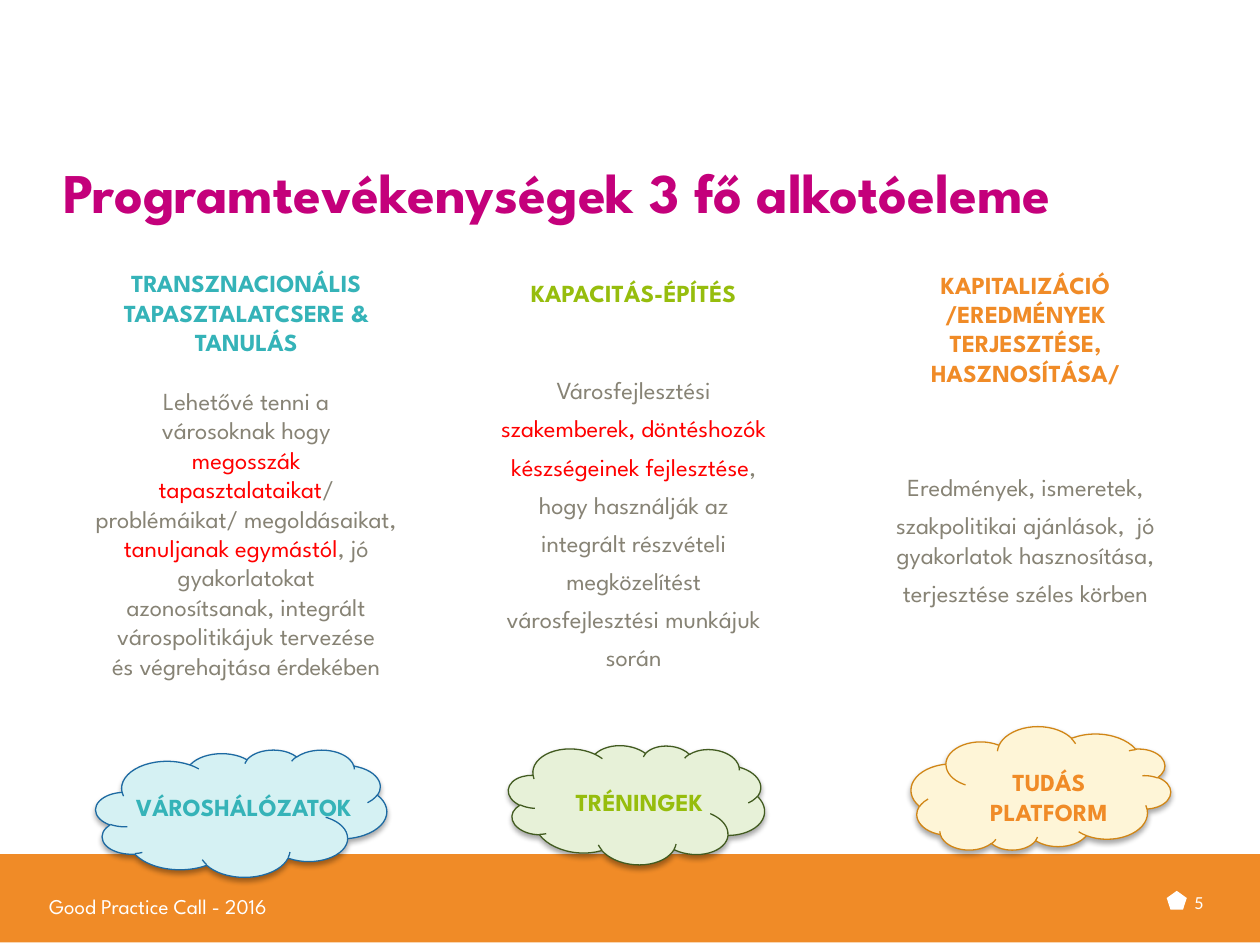
from lxml.etree import SubElement
from pptx import Presentation
from pptx.dml.color import RGBColor
from pptx.enum.shapes import MSO_SHAPE
from pptx.enum.text import MSO_ANCHOR, MSO_AUTO_SIZE, PP_ALIGN
from pptx.oxml.ns import qn
from pptx.util import Emu, Inches, Pt

MAGENTA = RGBColor(0xC4, 0x00, 0x7B)
TEAL = RGBColor(0x35, 0xB3, 0xB8)
GREEN = RGBColor(0x96, 0xBD, 0x0D)
ORANGE = RGBColor(0xF0, 0x8B, 0x27)
GREY = RGBColor(0x87, 0x83, 0x75)
RED = RGBColor(0xFF, 0x00, 0x00)
WHITE = RGBColor(0xFF, 0xFF, 0xFF)
PALE_TEAL = RGBColor(0xD5, 0xF1, 0xF3)
PALE_GREEN = RGBColor(0xE7, 0xF1, 0xD8)
PALE_YELLOW = RGBColor(0xFE, 0xF5, 0xD7)
BLUE_LINE = RGBColor(0x1D, 0x6A, 0xA2)
GREEN_LINE = RGBColor(0x42, 0x5B, 0x20)
ORANGE_LINE = RGBColor(0xD1, 0x86, 0x16)


class SlideBuilder:
    """Draws the elements of one slide in a shared style."""

    font_name = "League Spartan"
    text_size = 14

    def __init__(self, slide):
        self.slide = slide

    def add_shape(self, kind, box, fill):
        shape = self.slide.shapes.add_shape(kind, *map(Inches, box))
        shape.fill.solid()
        shape.fill.fore_color.rgb = fill
        shape.line.fill.background()
        shape.shadow.inherit = False
        return shape

    def add_cloud(self, box, fill, line, rotation=0):
        shape = self.add_shape(MSO_SHAPE.CLOUD, box, fill)
        shape.rotation = rotation
        shape.line.color.rgb = line
        shape.line.width = Pt(0.75)
        effects = shape._element.spPr.find(qn("a:effectLst"))
        shadow = SubElement(effects, qn("a:outerShdw"), blurRad=str(Pt(3.1)),
                            dist=str(Pt(1.8)), dir="5400000", rotWithShape="0")
        color = SubElement(shadow, qn("a:srgbClr"), val="000000")
        SubElement(color, qn("a:alpha"), val="35000")

    def add_text_box(self, box, wrap=True, margins=None, anchor=MSO_ANCHOR.TOP):
        frame = self.slide.shapes.add_textbox(*map(Inches, box)).text_frame
        frame.word_wrap = wrap
        frame.auto_size = MSO_AUTO_SIZE.NONE
        frame.vertical_anchor = anchor
        if margins:
            (frame.margin_left, frame.margin_top,
             frame.margin_right, frame.margin_bottom) = map(Inches, margins)
        return frame

    def add_run(self, paragraph, text, color, bold=False, size=None, font_name=None):
        run = paragraph.add_run()
        run.text = text
        run.font.name = font_name or self.font_name
        run.font.size = Pt(size or self.text_size)
        run.font.bold = bold
        run.font.color.rgb = color

    def add_line(self, box, text, color, margins=(0, 0, 0, 0),
                 anchor=MSO_ANCHOR.TOP, **style):
        frame = self.add_text_box(box, margins=margins, anchor=anchor)
        self.add_run(frame.paragraphs[0], text, color, **style)

    def add_centred_lines(self, frame, lines, bold=False, gap=0, spacing=0):
        for index, runs in enumerate(lines):
            paragraph = frame.paragraphs[0]
            if paragraph.runs:
                paragraph = frame.add_paragraph()
                paragraph.space_before = Pt(spacing if index else gap)
            paragraph.alignment = PP_ALIGN.CENTER
            for text, color in runs:
                self.add_run(paragraph, text, color, bold)

    def add_column(self, box, color, heading, body, gap, spacing):
        frame = self.add_text_box(box)
        self.add_centred_lines(frame, [[(text, color)] for text in heading], bold=True)
        self.add_centred_lines(frame, body, gap=gap, spacing=spacing)

    def add_cloud_label(self, box, color, lines, wrap=False):
        frame = self.add_text_box(box, wrap)
        frame.auto_size = MSO_AUTO_SIZE.SHAPE_TO_FIT_TEXT
        self.add_centred_lines(frame, [[(text, color)] for text in lines], bold=True)


def grey_lines(*lines):
    return [[(text, GREY)] for text in lines]


def main():
    presentation = Presentation()
    presentation.slide_width = Inches(10)
    presentation.slide_height = Emu(6843713)
    builder = SlideBuilder(presentation.slides.add_slide(presentation.slide_layouts[6]))

    builder.add_shape(MSO_SHAPE.RECTANGLE, (0, 6.78, 10, 0.7), ORANGE)
    builder.add_shape(MSO_SHAPE.REGULAR_PENTAGON, (9.26, 7.07, 0.16, 0.15), WHITE)
    builder.add_cloud((4.03, 5.9, 2.04, 0.96), PALE_GREEN, GREEN_LINE, 4.7)
    builder.add_cloud((7.23, 5.77, 2.06, 0.98), PALE_YELLOW, ORANGE_LINE, 180)
    builder.add_cloud((0.76, 5.95, 2.31, 1.01), PALE_TEAL, BLUE_LINE)

    builder.add_line((0.39, 7.09, 3.38, 0.22), "Good Practice Call - 2016", WHITE, size=12)
    builder.add_line((9.48, 6.96, 0.4, 0.4), "5", WHITE, anchor=MSO_ANCHOR.MIDDLE,
                     size=10.5, font_name="Calibri")
    builder.add_line((0.19, 1.2, 9.49, 0.58), "Programtevékenységek 3 fő alkotóeleme",
                     MAGENTA, margins=(0.31, 0, 0, 0), anchor=MSO_ANCHOR.BOTTOM,
                     size=32, bold=True)

    builder.add_column(
        (0.59, 2.08, 2.73, 3.84), TEAL,
        ["TRANSZNACIONÁLIS", "TAPASZTALATCSERE &", "TANULÁS"],
        grey_lines("Lehetővé tenni a", "városoknak hogy")
        + [[("megosszák", RED)],
           [("tapasztalataikat", RED), ("/ problémáikat/ megoldásaikat,", GREY)],
           [("tanuljanak egymástól", RED), (", jó", GREY)]]
        + grey_lines("gyakorlatokat", "azonosítsanak, integrált",
                     "várospolitikájuk tervezése", "és végrehajtása érdekében"),
        gap=16.8, spacing=0)
    builder.add_column(
        (3.7, 2.16, 2.66, 3.54), GREEN,
        ["KAPACITÁS-ÉPÍTÉS"],
        grey_lines("Városfejlesztési")
        + [[("szakemberek, döntéshozók", RED)],
           [("készségeinek fejlesztése", RED), (",", GREY)]]
        + grey_lines("hogy használják az", "integrált részvételi", "megközelítést",
                     "városfejlesztési munkájuk", "során"),
        gap=38.6, spacing=5)
    builder.add_column(
        (6.87, 2.09, 2.54, 3.61), ORANGE,
        ["KAPITALIZÁCIÓ", "/EREDMÉNYEK", "TERJESZTÉSE,", "HASZNOSÍTÁSA/"],
        grey_lines("Eredmények, ismeretek,",
                   "szakpolitikai ajánlások,  jó gyakorlatok hasznosítása,",
                   "terjesztése széles körben"),
        gap=48.6, spacing=5)

    builder.add_cloud_label((0.93, 6.24, 2.01, 0.34), TEAL, ["VÁROSHÁLÓZATOK"])
    builder.add_cloud_label((4.46, 6.2, 1.23, 0.34), GREEN, ["TRÉNINGEK"])
    builder.add_cloud_label((7.52, 6.04, 1.61, 0.57), ORANGE, ["TUDÁS", "PLATFORM"], wrap=True)

    presentation.save("out.pptx")


if __name__ == "__main__":
    main()
